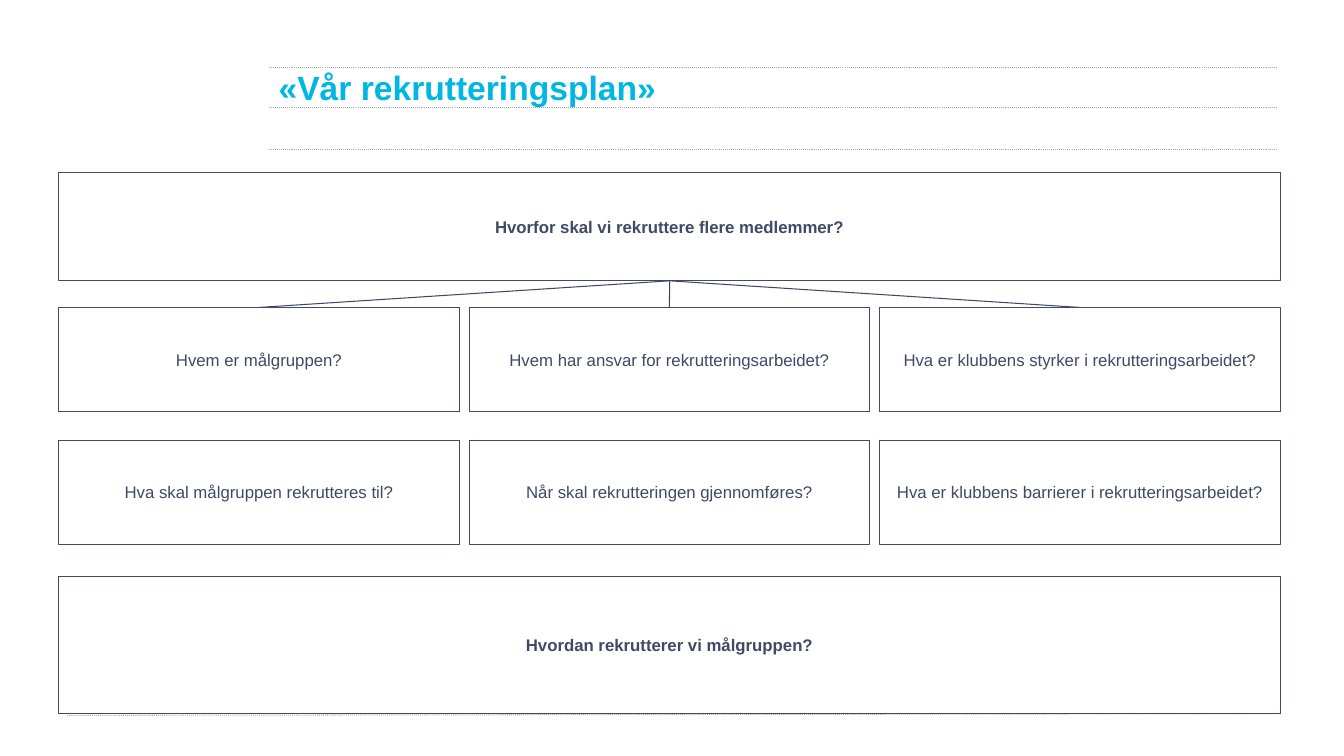
import pptx
import pptx.util
import pptx.dml.color
import pptx.enum.dml
import pptx.enum.shapes
import pptx.enum.text
from lxml import etree

Pt = pptx.util.Pt
RGBColor = pptx.dml.color.RGBColor

CYAN = RGBColor(0x00, 0xB6, 0xE3)
SLATE = RGBColor(0x40, 0x49, 0x65)
BRANCH = RGBColor(0x3E, 0x47, 0x64)
GREY = RGBColor(0xA8, 0xA9, 0xAA)

LEFT, FULL_WIDTH = 42, 872.6
COLUMN_WIDTH, COLUMN_PITCH = 286, 293.2
GRID_TOP, ROW_HEIGHT, ROW_PITCH = 219.6, 74.4, 94.8

QUESTIONS = [
    ["Hvem er målgruppen?",
     "Hvem har ansvar for rekrutteringsarbeidet?",
     "Hva er klubbens styrker i rekrutteringsarbeidet?"],
    ["Hva skal målgruppen rekrutteres til?",
     "Når skal rekrutteringen gjennomføres?",
     "Hva er klubbens barrierer i rekrutteringsarbeidet?"],
]
RULES = [(192, 48, 912, 48), (192, 76.5, 912, 76.5),
         (192, 106.5, 912, 106.5), (48, 511, 912, 509.8)]


def set_text(frame, text, color, **font_format):
    frame.word_wrap = True
    paragraph = frame.paragraphs[0]
    paragraph.text = text
    for name, value in {"name": "Arial", **font_format}.items():
        setattr(paragraph.font, name, value)
    paragraph.font.color.rgb = color
    return paragraph


def add_line(slide, color, x1=0, y1=0, x2=0, y2=0):
    line = slide.shapes.add_connector(
        pptx.enum.shapes.MSO_CONNECTOR.STRAIGHT, Pt(x1), Pt(y1), Pt(x2), Pt(y2))
    line.line.color.rgb = color
    line.line.width = Pt(0.75)
    properties = line.element.spPr
    etree.SubElement(properties, pptx.oxml.ns.qn("a:effectLst"))
    return line


def add_question(slide, text, left, top, width, height, bold=False):
    box = slide.shapes.add_shape(pptx.enum.shapes.MSO_SHAPE.RECTANGLE,
                                 Pt(left), Pt(top), Pt(width), Pt(height))
    box.shadow.inherit = False
    box.fill.background()
    box.line.color.rgb = SLATE
    box.line.width = Pt(0.75)
    box.text_frame.vertical_anchor = pptx.enum.text.MSO_ANCHOR.MIDDLE
    paragraph = set_text(box.text_frame, text, SLATE, size=Pt(12), bold=bold)
    paragraph.alignment = pptx.enum.text.PP_ALIGN.CENTER
    return box


def add_branch(slide, parent, child):
    branch = add_line(slide, BRANCH)
    branch.begin_connect(parent, 2)
    branch.end_connect(child, 0)


def main():
    deck = pptx.Presentation()
    deck.slide_width, deck.slide_height = Pt(960), Pt(540)
    slide = deck.slides.add_slide(deck.slide_layouts[6])

    # Dotted rules
    for ends in RULES:
        rule = add_line(slide, GREY, *ends)
        rule.line.dash_style = pptx.enum.dml.MSO_LINE.ROUND_DOT

    # Title
    title = slide.shapes.add_textbox(Pt(192), Pt(44), Pt(720), Pt(67))
    set_text(title.text_frame, "«Vår rekrutteringsplan»", CYAN, size=Pt(24), bold=True)

    # Why and how
    why = add_question(slide, "Hvorfor skal vi rekruttere flere medlemmer?",
                       LEFT, 123, FULL_WIDTH, 77.6, bold=True)
    add_question(slide, "Hvordan rekrutterer vi målgruppen?",
                 LEFT, 412, FULL_WIDTH, 97.6, bold=True)

    # Grid of questions, the first row branching from why
    for row, questions in enumerate(QUESTIONS):
        for column, text in enumerate(questions):
            question = add_question(slide, text, LEFT + column * COLUMN_PITCH,
                                    GRID_TOP + row * ROW_PITCH, COLUMN_WIDTH, ROW_HEIGHT)
            if row == 0:
                add_branch(slide, why, question)

    deck.save("out.pptx")


if __name__ == "__main__":
    main()
